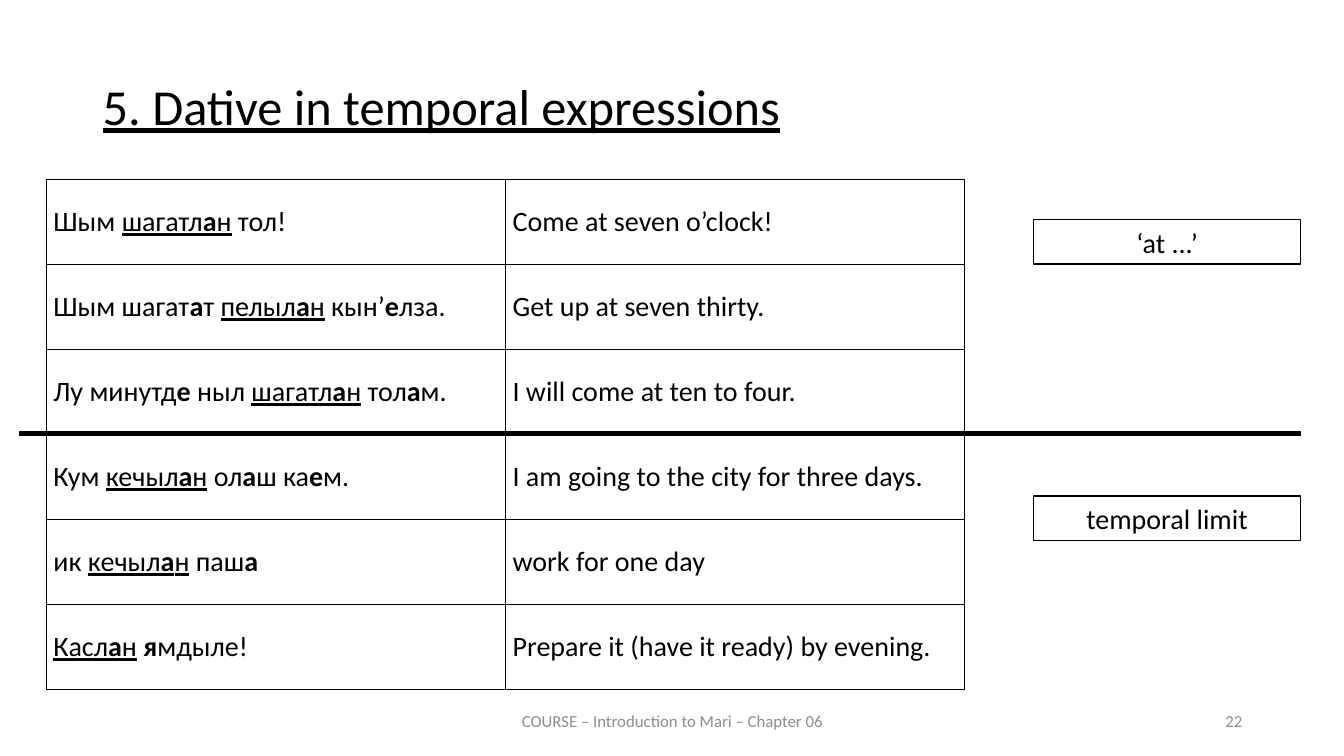
from lxml import etree
from pptx import Presentation
from pptx.dml.color import RGBColor
from pptx.enum.shapes import MSO_CONNECTOR, MSO_SHAPE
from pptx.enum.text import MSO_ANCHOR, MSO_AUTO_SIZE, PP_ALIGN
from pptx.oxml.ns import qn
from pptx.util import Inches, Pt

LEFT, CENTER, RIGHT, JUSTIFY = PP_ALIGN.LEFT, PP_ALIGN.CENTER, PP_ALIGN.RIGHT, PP_ALIGN.JUSTIFY
MIDDLE = MSO_ANCHOR.MIDDLE
FIT_SHAPE = MSO_AUTO_SIZE.SHAPE_TO_FIT_TEXT
RECTANGLE = MSO_SHAPE.RECTANGLE
STRAIGHT = MSO_CONNECTOR.STRAIGHT

BLACK = RGBColor(0x00, 0x00, 0x00)
WHITE = RGBColor(0xFF, 0xFF, 0xFF)
GREY = RGBColor(0x8C, 0x8C, 0x8C)
FONT = "Calibri"

TITLE = "_5. Dative in temporal expressions_"
FOOTER = "COURSE – Introduction to Mari – Chapter 06"
PAGE = "22"

# _underlined_ and *bold*; each group: label, label top, example rows
GROUPS = [
    ("‘at ...’", 2.18, [
        ("Шым _шагатл*а*н_ тол!", "Come at seven o’clock!"),
        ("Шым шагат*а*т _пелыл*а*н_ кын’*е*лза.", "Get up at seven thirty."),
        ("Лу минутд*е* ныл _шагатл*а*н_ тол*а*м.", "I will come at ten to four."),
    ]),
    ("temporal limit", 4.92, [
        ("Кум _кечыл*а*н_ ол*а*ш ка*е*м.", "I am going to the city for three days."),
        ("ик _кечыл*а*н_ паш*а*", "work for one day"),
        ("_Касл*а*н_ *я*мдыле!", "Prepare it (have it ready) by evening."),
    ]),
]

TABLE_LEFT, TABLE_TOP = 0.46, 1.78
TABLE_WIDTH, TABLE_HEIGHT = 9.11, 2.53
LABEL_LEFT, LABEL_WIDTH, LABEL_HEIGHT = 10.25, 2.65, 0.44
DIVIDER_LEFT, DIVIDER_Y = 0.19, 4.3


def write(frame, marked, size, align, color=BLACK):
    """Fill the first paragraph, turning _ and * marks into underline and bold."""
    paragraph = frame.paragraphs[0]
    paragraph.alignment = align
    for i, stretch in enumerate(marked.split("_")):
        for j, piece in enumerate(stretch.split("*")):
            if not piece:
                continue
            run = paragraph.add_run()
            run.text = piece
            run.font.name = FONT
            run.font.size = Pt(size)
            run.font.color.rgb = color
            run.font.underline = i % 2 == 1
            run.font.bold = j % 2 == 1
    return paragraph


def add_text(slide, box, marked, size, align, color=BLACK):
    frame = slide.shapes.add_textbox(*map(Inches, box)).text_frame
    frame.word_wrap = True
    return frame, write(frame, marked, size, align, color)


def add_borders(cell):
    properties = cell._tc.get_or_add_tcPr()
    for position, side in enumerate(("lnL", "lnR", "lnT", "lnB")):
        line = etree.Element(qn(f"a:{side}"), w=str(Pt(1)))
        fill = etree.SubElement(line, qn("a:solidFill"))
        etree.SubElement(fill, qn("a:srgbClr"), val=str(BLACK))
        properties.insert(position, line)


def add_examples(slide, top, rows):
    table = slide.shapes.add_table(
        len(rows), 2, Inches(TABLE_LEFT), Inches(top),
        Inches(TABLE_WIDTH), Inches(TABLE_HEIGHT)).table
    table.first_row = table.horz_banding = False
    for r, row in enumerate(rows):
        for c, sentence in enumerate(row):
            cell = table.cell(r, c)
            cell.fill.background()
            cell.vertical_anchor = MIDDLE
            cell.margin_left = cell.margin_right = Inches(0.07)
            cell.margin_top = cell.margin_bottom = 0
            write(cell.text_frame, sentence, 20, JUSTIFY)
            add_borders(cell)


def add_label(slide, top, label):
    box = slide.shapes.add_shape(
        RECTANGLE, Inches(LABEL_LEFT), Inches(top), Inches(LABEL_WIDTH), Inches(LABEL_HEIGHT))
    box.shadow.inherit = False
    box.fill.solid()
    box.fill.fore_color.rgb = WHITE
    box.line.color.rgb = BLACK
    box.line.width = Pt(1)
    box.text_frame.word_wrap = True
    box.text_frame.auto_size = FIT_SHAPE
    write(box.text_frame, label, 20, CENTER)


def add_divider(slide):
    y = Inches(DIVIDER_Y)
    divider = slide.shapes.add_connector(
        STRAIGHT, Inches(DIVIDER_LEFT), y, Inches(LABEL_LEFT + LABEL_WIDTH), y)
    divider.line.color.rgb = BLACK
    divider.line.width = Pt(3)
    etree.SubElement(divider._element.spPr, qn("a:effectLst"))


def main():
    prs = Presentation()
    prs.slide_width, prs.slide_height = Inches(13.33), Inches(7.5)
    slide = prs.slides.add_slide(prs.slide_layouts[6])

    _, title = add_text(slide, (0.92, 0.76, 11.5, 5.98), TITLE, 36, JUSTIFY)
    title.line_spacing = 0.9
    title.space_before = Pt(12)
    for box, text, align in (((4.42, 6.95, 4.5, 0.4), FOOTER, CENTER),
                             ((9.42, 6.95, 3, 0.4), PAGE, RIGHT)):
        frame, _ = add_text(slide, box, text, 12, align, GREY)
        frame.vertical_anchor = MIDDLE

    for i, (_, _, rows) in enumerate(GROUPS):
        add_examples(slide, TABLE_TOP + i * TABLE_HEIGHT, rows)
    add_divider(slide)
    for label, top, _ in GROUPS:
        add_label(slide, top, label)

    prs.save("out.pptx")


if __name__ == "__main__":
    main()
